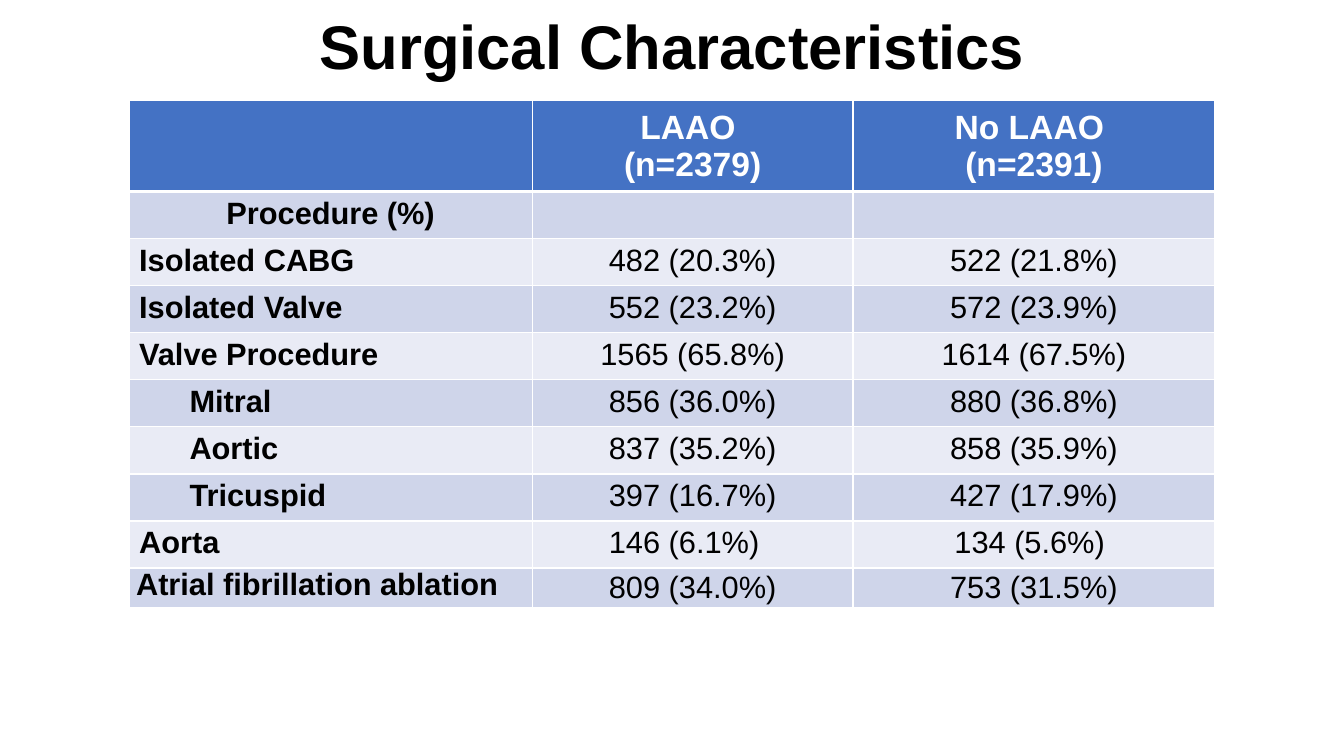
from dataclasses import dataclass

from lxml import etree
from pptx import Presentation
from pptx import util as u
from pptx.dml.color import RGBColor
from pptx.enum import text as t
from pptx.oxml import ns

FONT = "Arial"
BLACK, WHITE, BLUE = "000000", "FFFFFF", "4472C4"
BANDS = ("CFD5EA", "E9EBF5")
WIDTHS = (4, 3.18, 3.59)
HEAD = ("", "LAAO \n(n=2379)", "No LAAO \n(n=2391)")


@dataclass
class Row:
    label: str
    laao: str = ""
    none: str = ""
    indent: float = 0
    center: bool = False
    tight: bool = False


ROWS = (
    Row("Procedure (%)", center=True),
    Row("Isolated CABG", "482 (20.3%)", "522 (21.8%)"),
    Row("Isolated Valve", "552 (23.2%)", "572 (23.9%)"),
    Row("Valve Procedure", "1565 (65.8%)", "1614 (67.5%)"),
    Row("Mitral", "856 (36.0%)", "880 (36.8%)", indent=0.5),
    Row("Aortic", "837 (35.2%)", "858 (35.9%)", indent=0.5),
    Row("Tricuspid", "397 (16.7%)", "427 (17.9%)", indent=0.5),
    Row("Aorta", "146 (6.1%)  ", "134 (5.6%) "),
    Row("Atrial fibrillation ablation", "809 (34.0%)", "753 (31.5%)", tight=True),
)


def color(code: str) -> RGBColor:
    return RGBColor.from_string(code)


def style(frame, size: float, code: str, bold: bool, center: bool) -> None:
    for par in frame.paragraphs:
        par.alignment = t.PP_ALIGN.CENTER if center else t.PP_ALIGN.LEFT
        for run in par.runs:
            font = run.font
            font.name, font.size, font.bold = FONT, u.Pt(size), bold
            font.color.rgb = color(code)


def paint(cell, code: str, base: float = 1) -> None:
    """Give a cell white borders, the bottom one base points wide, and a fill."""
    props = cell._tc.get_or_add_tcPr()
    for side in "LRTB":
        width = u.Pt(base if side == "B" else 1)
        line = etree.SubElement(props, ns.qn(f"a:ln{side}"), w=str(width))
        fill = etree.SubElement(line, ns.qn("a:solidFill"))
        etree.SubElement(fill, ns.qn("a:srgbClr"), val=WHITE)
    cell.fill.solid()
    cell.fill.fore_color.rgb = color(code)


def add_title(slide) -> None:
    box = slide.shapes.add_textbox(u.Inches(0.92), u.Inches(-0.23), u.Inches(11.5), u.Inches(1.45))
    frame = box.text_frame
    frame.word_wrap = True
    frame.vertical_anchor = t.MSO_ANCHOR.MIDDLE
    frame.text = "Surgical Characteristics"
    frame.paragraphs[0].line_spacing = 0.9
    style(frame, 44, BLACK, True, True)


def fill_row(cells, row: Row, band: str) -> None:
    for col, (cell, words) in enumerate(zip(cells, (row.label, row.laao, row.none))):
        first = col == 0
        paint(cell, band)
        cell.text_frame.text = words
        style(cell.text_frame, 22, BLACK, first, row.center or not first)
        if first and row.indent:
            props = cell.text_frame.paragraphs[0]._p.get_or_add_pPr()
            props.set("marL", str(u.Inches(row.indent)))
        if row.tight:
            cell.margin_left = cell.margin_right = u.Inches(0.07)
            cell.margin_top = cell.margin_bottom = 0
            if not first:
                cell.vertical_anchor = t.MSO_ANCHOR.MIDDLE


def add_grid(slide) -> None:
    heights = [0.84] + [0.39 if row.tight else 0.44 for row in ROWS]
    grid = slide.shapes.add_table(
        len(heights), len(WIDTHS), u.Inches(1.28), u.Inches(1),
        u.Inches(sum(WIDTHS)), u.Inches(sum(heights))).table
    for col, width in zip(grid.columns, WIDTHS):
        col.width = u.Inches(width)
    for line, height in zip(grid.rows, heights):
        line.height = u.Inches(height)
    for cell, words in zip(grid.rows[0].cells, HEAD):
        paint(cell, BLUE, 3)
        cell.text_frame.text = words
        cell.vertical_anchor = t.MSO_ANCHOR.MIDDLE
        style(cell.text_frame, 24, WHITE, True, True)
    for num, row in enumerate(ROWS):
        fill_row(grid.rows[num + 1].cells, row, BANDS[num % 2])


def main() -> None:
    deck = Presentation()
    deck.slide_width, deck.slide_height = u.Inches(13.33), u.Inches(7.5)
    slide = deck.slides.add_slide(deck.slide_layouts[6])
    add_title(slide)
    add_grid(slide)
    deck.save("out.pptx")


if __name__ == "__main__":
    main()
